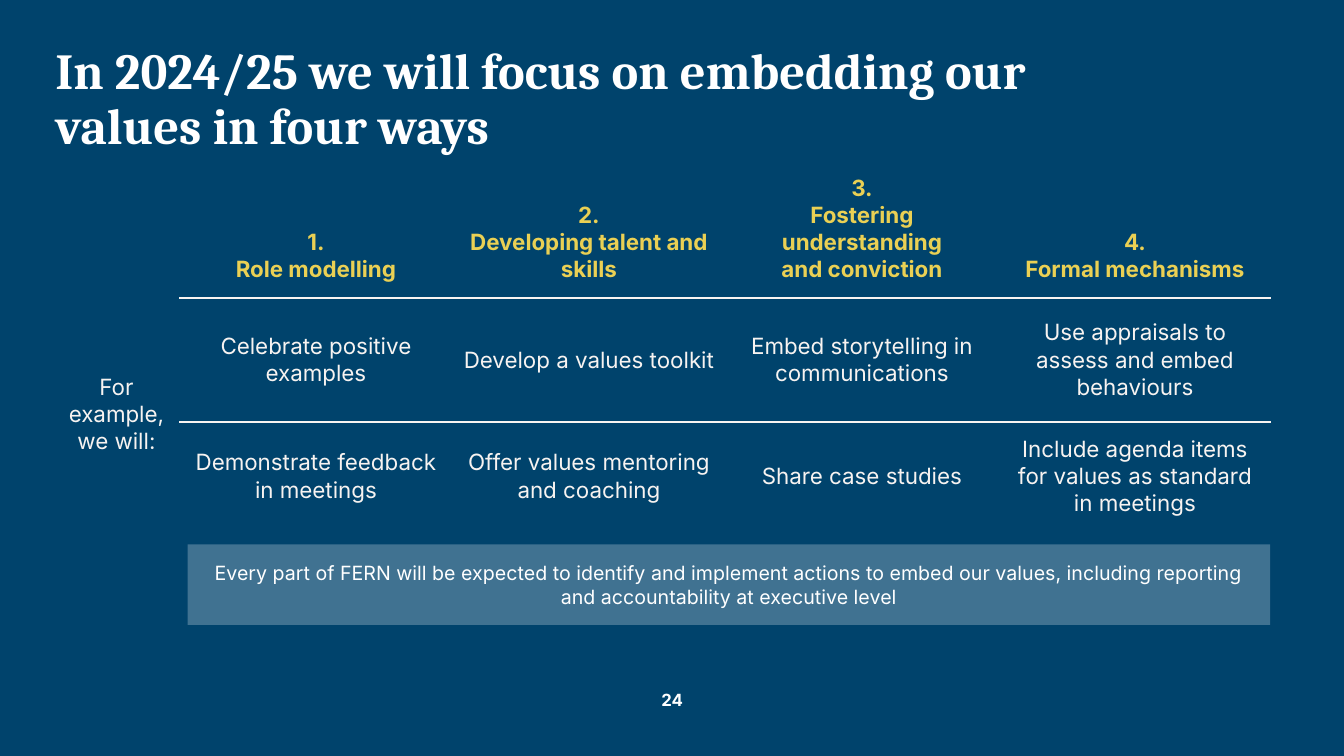
from dataclasses import dataclass

from lxml.etree import SubElement
from pptx import Presentation
from pptx.dml.color import RGBColor
from pptx.enum.shapes import MSO_SHAPE as Preset
from pptx.enum.text import MSO_ANCHOR as Anchor, MSO_AUTO_SIZE as AutoSize, PP_ALIGN as Align
from pptx.oxml.ns import qn
from pptx.util import Pt


@dataclass(frozen=True)
class Theme:
    """Colours, fonts and type sizes of the slide."""
    navy: str = "00436C"
    steel: str = "407291"
    yellow: str = "EAD054"
    cream: str = "F7F3F1"
    white: str = "FFFFFF"
    heading: str = "Cambria"
    body: str = "Inter"
    title_size: int = 36
    table_size: int = 16
    callout_size: int = 14
    number_size: int = 12


THEME = Theme()
NO_GRID_STYLE = "{2D5ABB26-0587-4C30-8999-92F81FD0307C}"
TITLE = "In 2024/25 we will focus on embedding our values in four ways"
ROW_LABEL = "For example, we will:"
HEADERS = [
    "Role modelling",
    "Developing talent and skills",
    "Fostering understanding\vand conviction",
    "Formal mechanisms",
]
EXAMPLES = [
    ["Celebrate positive examples", "Develop a values toolkit",
     "Embed storytelling in communications", "Use appraisals to assess and embed behaviours"],
    ["Demonstrate feedback in meetings", "Offer values mentoring and coaching",
     "Share case studies", "Include agenda items for values as standard in meetings"],
]
CALLOUT = ("Every part of FERN will be expected to identify and implement actions to embed "
           "our values, including reporting and accountability at executive level")


def write(frame, lines, size, color, bold=False, font=THEME.body, align=Align.CENTER):
    """Write one paragraph per line; a vertical tab breaks a line within it."""
    frame.word_wrap = True
    for index, line in enumerate(lines):
        paragraph = frame.add_paragraph() if index else frame.paragraphs[0]
        paragraph.alignment = align
        for part_index, part in enumerate(line.split("\v")):
            if part_index:
                paragraph.add_line_break()
            run = paragraph.add_run()
            run.text = part
            run.font.name = font
            run.font.size = Pt(size)
            run.font.bold = bold
            run.font.color.rgb = RGBColor.from_string(color)


def add_title(slide):
    """Place and format the title placeholder."""
    title = slide.shapes.title
    title.left, title.top, title.width, title.height = Pt(32.4), Pt(29.5), Pt(734.4), Pt(91.4)
    frame = title.text_frame
    frame.auto_size = AutoSize.NONE
    frame.vertical_anchor = Anchor.TOP
    write(frame, [TITLE], THEME.title_size, THEME.white, True, THEME.heading, Align.LEFT)
    frame.paragraphs[0].line_spacing = 0.9


def add_border(cell, side):
    """Draw a cream rule on one side of a cell."""
    line = SubElement(cell._tc.get_or_add_tcPr(), qn(f"a:{side}"), w=str(Pt(1.5)))
    fill = SubElement(line, qn("a:solidFill"))
    SubElement(fill, qn("a:srgbClr"), val=THEME.cream)


def fill_header(cell, number, text):
    """Write a numbered column heading above a rule."""
    cell.vertical_anchor = Anchor.BOTTOM
    cell.margin_left = cell.margin_right = cell.margin_top = cell.margin_bottom = Pt(10.8)
    add_border(cell, "lnB")
    write(cell.text_frame, [f"{number}.", text], THEME.table_size, THEME.yellow, True)


def fill_body(cell, text):
    """Write a centred example or row label."""
    cell.vertical_anchor = Anchor.MIDDLE
    write(cell.text_frame, [text], THEME.table_size, THEME.cream)


def add_values_table(slide):
    """Add the table of four ways and their examples."""
    columns, rows = [90] + [195] * 4, [94.3, 88.6, 77.8]
    table = slide.shapes.add_table(len(rows), len(columns), Pt(38.2), Pt(113.8),
                                   Pt(sum(columns)), Pt(sum(rows))).table
    table._tbl.tblPr.find(qn("a:tableStyleId")).text = NO_GRID_STYLE
    table.first_row = table.horz_banding = False
    for column, width in zip(table.columns, columns):
        column.width = Pt(width)
    for row, height in zip(table.rows, rows):
        row.height = Pt(height)
    table.cell(1, 0).merge(table.cell(2, 0))
    fill_body(table.cell(1, 0), ROW_LABEL)
    for number, header in enumerate(HEADERS, 1):
        fill_header(table.cell(0, number), number, header)
        add_border(table.cell(1, number), "lnT")
        for row_index, examples in enumerate(EXAMPLES, 1):
            fill_body(table.cell(row_index, number), examples[number - 1])
    for cell in table.iter_cells():
        cell.fill.solid()
        cell.fill.fore_color.rgb = RGBColor.from_string(THEME.navy)


def add_callout(slide):
    """Add the band below the table."""
    shape = slide.shapes.add_shape(Preset.RECTANGLE, Pt(134), Pt(388.8), Pt(773.3), Pt(57.6))
    shape.shadow.inherit = False
    shape.fill.solid()
    shape.fill.fore_color.rgb = RGBColor.from_string(THEME.steel)
    shape.line.fill.background()
    shape.text_frame.vertical_anchor = Anchor.MIDDLE
    write(shape.text_frame, [CALLOUT], THEME.callout_size, THEME.white)


def add_page_number(slide):
    """Add the page number at the foot."""
    shape = slide.shapes.add_textbox(Pt(372.2), Pt(485.3), Pt(216), Pt(28.8))
    shape.text_frame.vertical_anchor = Anchor.MIDDLE
    write(shape.text_frame, ["24"], THEME.number_size, THEME.white, True)


def main():
    """Build and save the slide."""
    presentation = Presentation()
    presentation.slide_width, presentation.slide_height = Pt(960), Pt(540)
    slide = presentation.slides.add_slide(presentation.slide_layouts[5])
    slide.background.fill.solid()
    slide.background.fill.fore_color.rgb = RGBColor.from_string(THEME.navy)
    add_title(slide)
    add_values_table(slide)
    add_callout(slide)
    add_page_number(slide)
    presentation.save("out.pptx")


if __name__ == "__main__":
    main()
